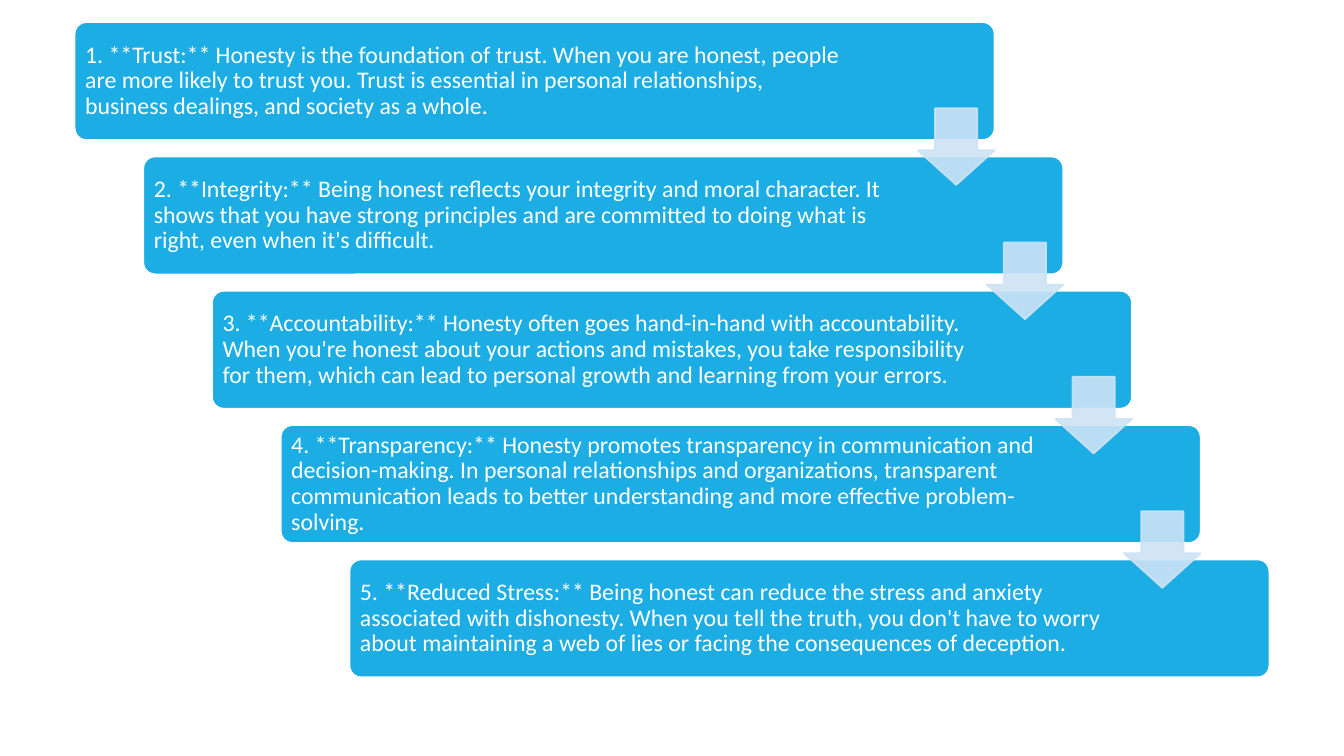
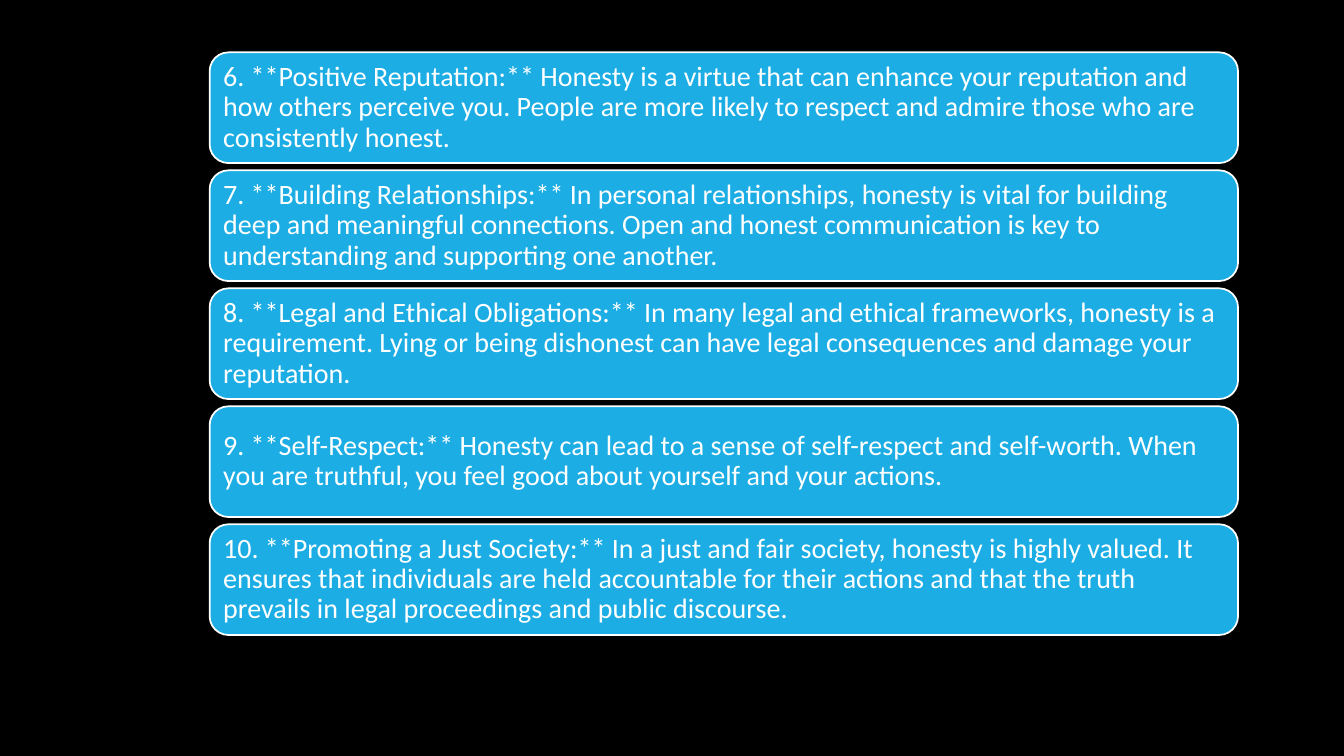
from dataclasses import dataclass

from lxml.etree import SubElement
from pptx import Presentation
from pptx.dml.color import RGBColor
from pptx.enum.shapes import MSO_SHAPE as Shape
from pptx.enum.text import MSO_ANCHOR as Anchor, PP_ALIGN as Align
from pptx.oxml.ns import qn
from pptx.util import Inches, Pt

WHITE = RGBColor(0xFF, 0xFF, 0xFF)
BLACK = RGBColor(0x00, 0x00, 0x00)
BLUE = RGBColor(0x1C, 0xAD, 0xE4)
PALE_BLUE = RGBColor(0xCD, 0xE3, 0xF5)

SLIDE_WIDTH, SLIDE_HEIGHT = Inches(13.33), Inches(7.5)
LINE_WIDTH = Pt(1.25)
ARROW_SIZE, ARROW_DROP = 0.65, 0.73
ARROW_OPACITY = 90

STEPS = (
    "1. **Trust:** Honesty is the foundation of trust. When you are honest, people are more likely "
    "to trust you. Trust is essential in personal relationships, business dealings, and society as a whole.",
    "2. **Integrity:** Being honest reflects your integrity and moral character. It shows that you have "
    "strong principles and are committed to doing what is right, even when it's difficult.",
    "3. **Accountability:** Honesty often goes hand-in-hand with accountability. When you're honest about "
    "your actions and mistakes, you take responsibility for them, which can lead to personal growth and "
    "learning from your errors.",
    "4. **Transparency:** Honesty promotes transparency in communication and decision-making. In personal "
    "relationships and organizations, transparent communication leads to better understanding and more "
    "effective problem-solving.",
    "5. **Reduced Stress:** Being honest can reduce the stress and anxiety associated with dishonesty. When "
    "you tell the truth, you don't have to worry about maintaining a web of lies or facing the consequences "
    "of deception.",
)
BENEFITS = (
    "6. **Positive Reputation:** Honesty is a virtue that can enhance your reputation and how others "
    "perceive you. People are more likely to respect and admire those who are consistently honest.",
    "7. **Building Relationships:** In personal relationships, honesty is vital for building deep and "
    "meaningful connections. Open and honest communication is key to understanding and supporting one another.",
    "8. **Legal and Ethical Obligations:** In many legal and ethical frameworks, honesty is a requirement. "
    "Lying or being dishonest can have legal consequences and damage your reputation.",
    "9. **Self-Respect:** Honesty can lead to a sense of self-respect and self-worth. When you are truthful, "
    "you feel good about yourself and your actions.",
    "10. **Promoting a Just Society:** In a just and fair society, honesty is highly valued. It ensures that "
    "individuals are held accountable for their actions and that the truth prevails in legal proceedings "
    "and public discourse.",
)


@dataclass
class Box:
    """Hold a rectangle in slide units."""
    left: int
    top: int
    width: int
    height: int

    def edges(self):
        """Return left, top, width and height as whole numbers."""
        return tuple(round(edge) for edge in (self.left, self.top, self.width, self.height))


def slide_box(left, top, width, height):
    """Turn percentages of the slide into a box."""
    return Box(left * SLIDE_WIDTH / 100, top * SLIDE_HEIGHT / 100,
               width * SLIDE_WIDTH / 100, height * SLIDE_HEIGHT / 100)


def set_format(target, values):
    """Set each named attribute of the target."""
    for name, value in values.items():
        setattr(target, name, value)


def add_page(deck, background):
    """Add a blank page with a plain background."""
    page = deck.slides.add_slide(deck.slide_layouts[6])
    page.background.fill.solid()
    page.background.fill.fore_color.rgb = background
    return page


def add_block(page, kind, box, fill, line, adjustments):
    """Draw a filled and outlined preset shape."""
    block = page.shapes.add_shape(kind, *box.edges())
    block.shadow.inherit = False
    block.fill.solid()
    block.fill.fore_color.rgb = fill
    block.line.color.rgb = line
    block.line.width = LINE_WIDTH
    for index, value in enumerate(adjustments):
        block.adjustments[index] = value
    return block


def add_bar(page, box, text, style):
    """Draw a rounded bar with its text."""
    bar = add_block(page, Shape.ROUNDED_RECTANGLE, box, BLUE, WHITE, (style["rounding"],))
    frame = bar.text_frame
    inset = Inches(style["inset"])
    set_format(frame, {
        "word_wrap": True, "vertical_anchor": Anchor.MIDDLE,
        "margin_left": inset, "margin_top": inset, "margin_bottom": inset,
        "margin_right": inset + round(style["reserve"] * box.width),
    })
    para = frame.paragraphs[0]
    set_format(para, {"alignment": Align.LEFT, "line_spacing": 0.9})
    span = para.add_run()
    span.text = text
    set_format(span.font, {"name": "Calibri", "size": Pt(style["size"])})
    span.font.color.rgb = WHITE


def add_arrow(page, bar_box):
    """Draw a translucent arrow from the right end of a bar to the next."""
    side = ARROW_SIZE * bar_box.height
    box = Box(bar_box.left + bar_box.width - side, bar_box.top + ARROW_DROP * bar_box.height, side, side)
    arrow = add_block(page, Shape.DOWN_ARROW, box, PALE_BLUE, PALE_BLUE, (0.55, 0.45))
    for color in arrow.element.spPr.iter(qn("a:srgbClr")):
        SubElement(color, qn("a:alpha"), val=str(ARROW_OPACITY * 1000))


def add_bars(page, box, texts, style):
    """Spread bars evenly from the top left to the bottom right of the box."""
    width, height = style["width"] * box.width, style["height"] * box.height
    gaps = len(texts) - 1
    across, down = (box.width - width) / gaps, (box.height - height) / gaps
    bar_boxes = [Box(box.left + index * across, box.top + index * down, width, height)
                 for index in range(len(texts))]
    for bar_box, text in zip(bar_boxes, texts):
        add_bar(page, bar_box, text, style)
    return bar_boxes


def add_staircase(page, box):
    """Place the steps as a staircase joined by arrows."""
    style = {"width": 0.77, "height": 0.18, "rounding": 0.1, "inset": 0.07, "reserve": 0.15, "size": 17}
    for bar_box in add_bars(page, box, STEPS, style)[:-1]:
        add_arrow(page, bar_box)


def add_stack(page, box):
    """Place the benefits as a column of full-width bars."""
    style = {"width": 1, "height": 0.19, "rounding": 0.17, "inset": 0.08, "reserve": 0, "size": 20}
    add_bars(page, box, BENEFITS, style)


def main():
    """Build and save the deck."""
    deck = Presentation()
    set_format(deck, {"slide_width": SLIDE_WIDTH, "slide_height": SLIDE_HEIGHT})
    add_staircase(add_page(deck, WHITE), slide_box(5.55, 2.93, 88.9, 86.67))
    add_stack(add_page(deck, BLACK), slide_box(15.6, 6.93, 76.52, 77.07))
    deck.save("out.pptx")


if __name__ == "__main__":
    main()
